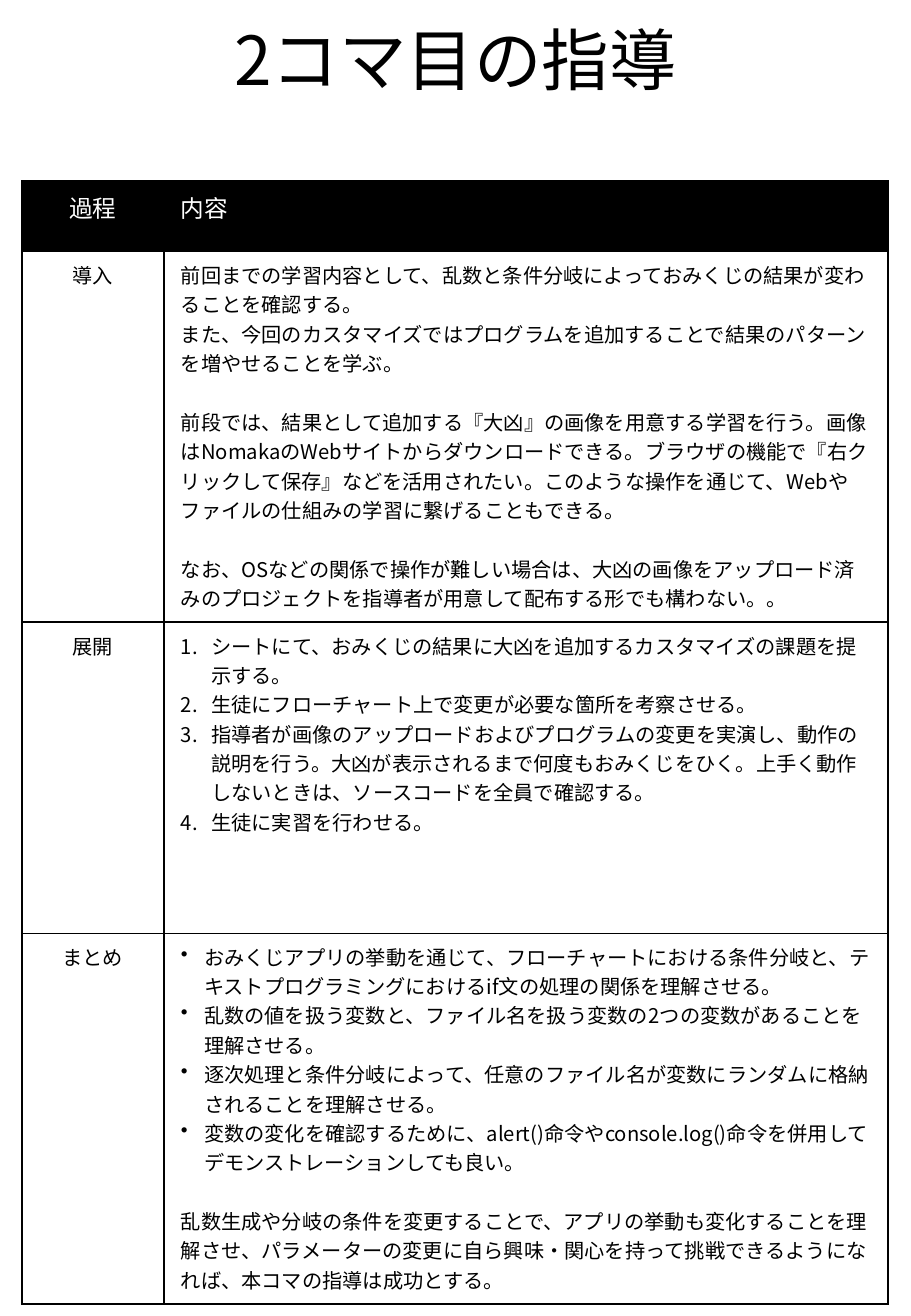
from dataclasses import dataclass

from lxml.etree import SubElement
from pptx import Presentation
from pptx.dml.color import RGBColor
from pptx.enum.text import MSO_ANCHOR, PP_ALIGN
from pptx.oxml import parse_xml
from pptx.oxml.ns import nsdecls, qn
from pptx.util import Inches, Pt


@dataclass(frozen=True)
class Theme:
    font: str = "Noto Sans CJK JP"
    ink: RGBColor = RGBColor(0, 0, 0)
    paper: RGBColor = RGBColor(255, 255, 255)
    title: int = 40
    heading: int = 14
    body: int = 12
    section_gap: float = 17.4
    border: int = 1


THEME = Theme()

# Each content line is (text, list marker, starts a new section)
STAGES = [
    ("導入", 3.05, [
        ("前回までの学習内容として、乱数と条件分岐によっておみくじの結果が変わることを確認する。", None, False),
        ("また、今回のカスタマイズではプログラムを追加することで結果のパターンを増やせることを学ぶ。", None, False),
        ("前段では、結果として追加する『大凶』の画像を用意する学習を行う。画像はNomakaのWebサイトからダウンロードできる。"
         "ブラウザの機能で『右クリックして保存』などを活用されたい。このような操作を通じて、"
         "Webやファイルの仕組みの学習に繋げることもできる。", None, True),
        ("なお、OSなどの関係で操作が難しい場合は、大凶の画像をアップロード済みのプロジェクトを"
         "指導者が用意して配布する形でも構わない。。", None, True),
    ]),
    ("展開", 2.56, [
        ("シートにて、おみくじの結果に大凶を追加するカスタマイズの課題を提示する。", "number", False),
        ("生徒にフローチャート上で変更が必要な箇所を考察させる。", "number", False),
        ("指導者が画像のアップロードおよびプログラムの変更を実演し、動作の説明を行う。"
         "大凶が表示されるまで何度もおみくじをひく。上手く動作しないときは、"
         "ソースコードを全員で確認する。", "number", False),
        ("生徒に実習を行わせる。", "number", False),
    ]),
    ("まとめ", 3.05, [
        ("おみくじアプリの挙動を通じて、フローチャートにおける条件分岐と、"
         "テキストプログラミングにおけるif文の処理の関係を理解させる。", "bullet", False),
        ("乱数の値を扱う変数と、ファイル名を扱う変数の2つの変数があることを理解させる。", "bullet", False),
        ("逐次処理と条件分岐によって、任意のファイル名が変数にランダムに格納されることを理解させる。", "bullet", False),
        ("変数の変化を確認するために、alert()命令やconsole.log()命令を併用して"
         "デモンストレーションしても良い。", "bullet", False),
        ("乱数生成や分岐の条件を変更することで、アプリの挙動も変化することを理解させ、"
         "パラメーターの変更に自ら興味・関心を持って挑戦できるようになれば、"
         "本コマの指導は成功とする。", None, True),
    ]),
]

# Marker kind: indent in inches, tag, attributes
MARKERS = {
    "number": (0.25, "a:buAutoNum", {"type": "arabicPeriod"}),
    "bullet": (0.19, "a:buChar", {"char": "•"}),
}


def style(paragraph, size, color, align=PP_ALIGN.LEFT):
    paragraph.alignment = align
    font = paragraph.font
    font.size = Pt(size)
    font.name = THEME.font
    font.color.rgb = color
    # East Asian text needs its own typeface entry
    SubElement(font._element, qn("a:ea"), typeface=THEME.font)


def add_marker(paragraph, kind):
    indent, tag, attributes = MARKERS[kind]
    properties = paragraph._p.get_or_add_pPr()
    properties.set("marL", str(Inches(indent)))
    properties.set("indent", str(-Inches(indent)))
    marker = SubElement(properties, qn(tag), attributes)
    paragraph.font._element.addprevious(marker)


def format_cell(cell, fill):
    cell.margin_left = cell.margin_right = Inches(0.14)
    cell.margin_top = cell.margin_bottom = Inches(0.07)
    cell.fill.solid()
    cell.fill.fore_color.rgb = fill
    properties = cell._tc.get_or_add_tcPr()
    for position, side in enumerate("LRTB"):
        properties.insert(position, parse_xml(
            f'<a:ln{side} {nsdecls("a")} w="{Pt(THEME.border)}"><a:solidFill>'
            f'<a:srgbClr val="{THEME.ink}"/></a:solidFill></a:ln{side}>'))


def fill_cell(cell, lines, size, color, fill, align=PP_ALIGN.LEFT):
    format_cell(cell, fill)
    frame = cell.text_frame
    for index, (text, marker, new_section) in enumerate(lines):
        paragraph = frame.add_paragraph() if index else frame.paragraphs[0]
        paragraph.text = text
        style(paragraph, size, color, align)
        if new_section:
            paragraph.space_before = Pt(THEME.section_gap)
        if marker:
            add_marker(paragraph, marker)


def add_title(slide, left, top, width, height):
    title = slide.shapes.add_textbox(left, top, width, height)
    frame = title.text_frame
    frame.word_wrap = True
    frame.vertical_anchor = MSO_ANCHOR.BOTTOM
    heading = frame.paragraphs[0]
    heading.text = "2コマ目の指導"
    heading.line_spacing = 0.9
    style(heading, THEME.title, THEME.ink, PP_ALIGN.CENTER)


def add_lesson_plan(slide, left, top, width, height):
    plan = slide.shapes.add_table(len(STAGES) + 1, 2, left, top, width, height).table
    stage_width = Inches(1.17)
    plan.columns[0].width = stage_width
    plan.columns[1].width = width - stage_width

    # Heading row
    plan.rows[0].height = Inches(0.58)
    for column, (label, align) in enumerate(
            [("過程", PP_ALIGN.CENTER), ("内容", PP_ALIGN.LEFT)]):
        fill_cell(plan.cell(0, column), [(label, None, False)],
                  THEME.heading, THEME.paper, THEME.ink, align)

    # One row per stage of the lesson
    for row, (stage, row_height, lines) in enumerate(STAGES, 1):
        plan.rows[row].height = Inches(row_height)
        fill_cell(plan.cell(row, 0), [(stage, None, False)],
                  THEME.body, THEME.ink, THEME.paper, PP_ALIGN.CENTER)
        fill_cell(plan.cell(row, 1), lines, THEME.body, THEME.ink, THEME.paper)


def main():
    deck = Presentation()
    deck.slide_width, deck.slide_height = Inches(7.5), Inches(10.83)
    slide = deck.slides.add_slide(deck.slide_layouts[6])
    add_title(slide, Inches(0.56), Inches(0.06), Inches(6.38), Inches(0.81))
    add_lesson_plan(slide, Inches(0.18), Inches(1.49), Inches(7.13), Inches(9.24))
    deck.save("out.pptx")


if __name__ == "__main__":
    main()
